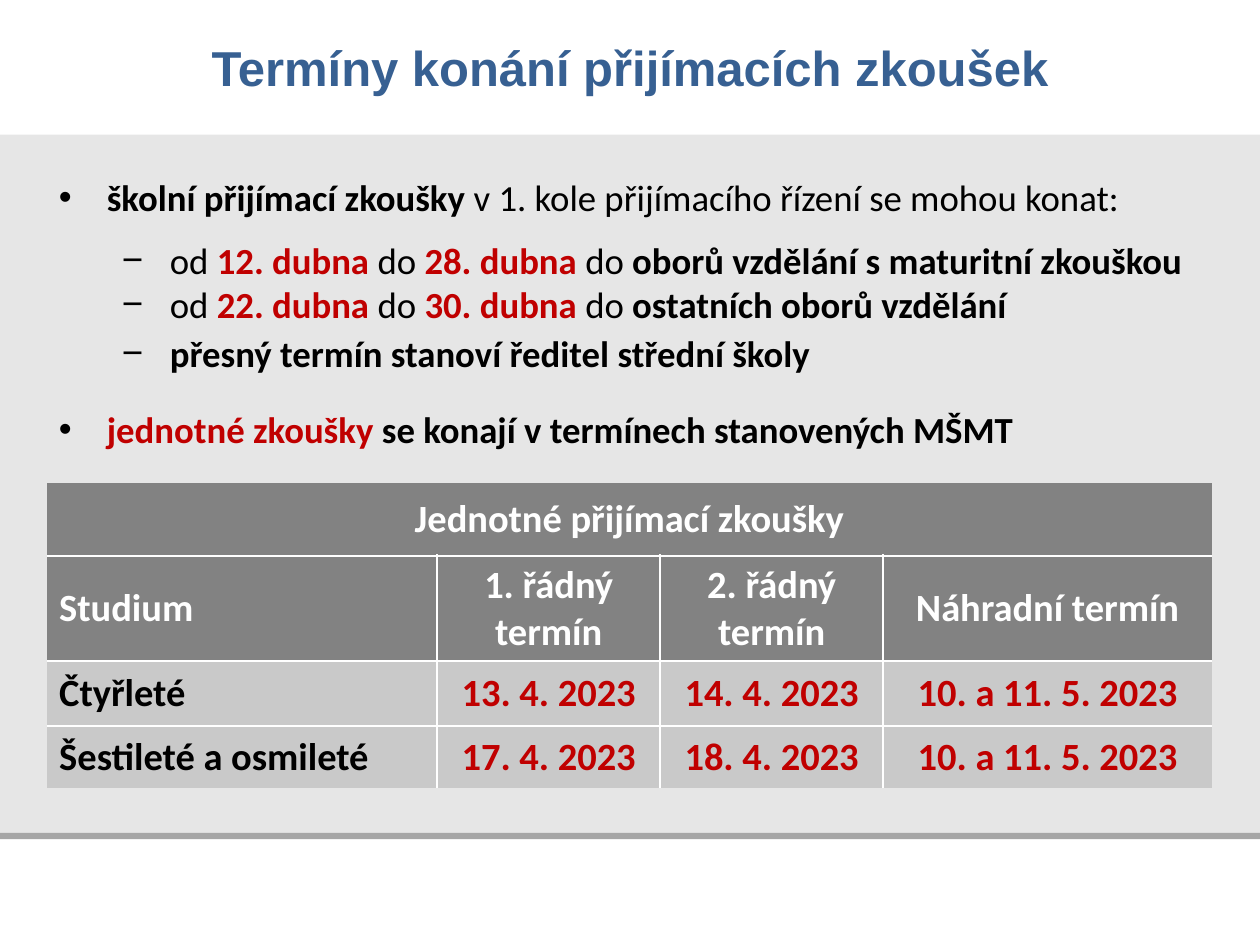
from lxml import etree
from pptx import Presentation
from pptx import util as u
from pptx.dml.color import RGBColor
from pptx.enum import shapes, text
from pptx.oxml.ns import qn

BACKGROUND = RGBColor(0xE6, 0xE6, 0xE6)
WHITE = RGBColor(0xFF, 0xFF, 0xFF)
BLACK = RGBColor(0, 0, 0)
RULE = RGBColor(0xA6, 0xA6, 0xA6)
BLUE = RGBColor(0x37, 0x60, 0x92)
RED = RGBColor(0xC0, 0, 0)
HEADER_GREY = RGBColor(0x82, 0x82, 0x82)
BODY_GREY = RGBColor(0xC9, 0xC9, 0xC9)

WIDTH, HEIGHT = 10, 7.5
MARGIN = 0.37
BLEED = 0.12
BORDER = 1.47
INDENT = 0.38

TITLE = "Termíny konání přijímacích zkoušek"
BANDS = [(6.66, 0.87, WHITE), (6.61, 0.05, RULE), (0, 1.07, WHITE)]

PLAIN = (BLACK, False)
STRONG = (BLACK, True)
ALERT = (RED, True)
BULLETS = [
    (0, 0, [("školní přijímací zkoušky ", STRONG),
            ("v 1. kole přijímacího řízení se mohou konat:", PLAIN)]),
    (1, 10.5, [("od ", PLAIN), ("12. dubna ", ALERT), ("do ", PLAIN),
               ("28. dubna ", ALERT), ("do", PLAIN),
               (" oborů vzdělání s maturitní zkouškou", STRONG)]),
    (1, 0, [("od ", PLAIN), ("22. dubna ", ALERT), ("do ", PLAIN),
            ("30. dubna ", ALERT), ("do", PLAIN),
            (" ostatních oborů vzdělání", STRONG)]),
    (1, 3, [("přesný termín stanoví ředitel střední školy", STRONG)]),
    (0, 18, [("jednotné zkoušky ", ALERT),
             ("se konají v termínech stanovených MŠMT", STRONG)]),
]
LEVELS = [("•", INDENT), ("−", 0.88)]

COLUMNS = [3.1, 1.77, 1.77, 2.61]
ROWS = [0.58, 0.83, 0.52, 0.49]
HEADER_ROWS = 2
EXAMS = [
    ["Jednotné přijímací zkoušky", "", "", ""],
    ["Studium", "1. řádný termín", "2. řádný termín", "Náhradní termín"],
    ["Čtyřleté", "13. 4. 2023", "14. 4. 2023", "10. a 11. 5. 2023"],
    ["Šestileté a osmileté", "17. 4. 2023", "18. 4. 2023", "10. a 11. 5. 2023"],
]


def set_format(target, values):
    for name, value in values.items():
        setattr(target, name, value)


def add_run(paragraph, words, color, bold, size, name="Calibri"):
    run = paragraph.add_run()
    run.text = words
    set_format(run.font, {"size": u.Pt(size), "bold": bold, "name": name})
    run.font.color.rgb = color


def add_text_frame(slide, left, top, width, height, **values):
    box = slide.shapes.add_textbox(*map(u.Inches, (left, top, width, height)))
    set_format(box.text_frame, {"word_wrap": True, **values})
    return box.text_frame


def add_band(slide, top, height, color):
    band = slide.shapes.add_shape(
        shapes.MSO_SHAPE.RECTANGLE,
        *map(u.Inches, (-BLEED, top, WIDTH + 2 * BLEED, height)))
    band.shadow.inherit = False
    band.fill.solid()
    band.fill.fore_color.rgb = color
    band.line.fill.background()


def add_bullet(paragraph, level):
    mark, left = LEVELS[level]
    properties = paragraph._p.get_or_add_pPr()
    properties.set("marL", str(u.Inches(left)))
    properties.set("indent", str(-u.Inches(INDENT)))
    color = etree.SubElement(properties, qn("a:buClr"))
    etree.SubElement(color, qn("a:srgbClr"), val=str(BLACK))
    etree.SubElement(properties, qn("a:buFont"), typeface="Arial")
    etree.SubElement(properties, qn("a:buChar"), char=mark)


def add_bullets(slide):
    frame = add_text_frame(slide, MARGIN, 1.34, WIDTH - 2 * MARGIN, 2.62)
    for index, (level, before, runs) in enumerate(BULLETS):
        paragraph = frame.add_paragraph() if index else frame.paragraphs[0]
        add_bullet(paragraph, level)
        set_format(paragraph, {"level": level, "space_before": u.Pt(before),
                               "alignment": text.PP_ALIGN.JUSTIFY})
        for words, (color, bold) in runs:
            add_run(paragraph, words, color, bold, 21)


def set_borders(cell, row, column):
    inner = {"a:lnL": column > 0, "a:lnR": column < len(COLUMNS) - 1,
             "a:lnT": row > 0, "a:lnB": row < len(ROWS) - 1}
    if row == 0:
        inner["a:lnL"] = inner["a:lnR"] = False
    properties = cell._tc.get_or_add_tcPr()
    for position, (side, visible) in enumerate(inner.items()):
        line = etree.Element(qn(side), w=str(u.Pt(BORDER)))
        if visible:
            fill = etree.SubElement(line, qn("a:solidFill"))
            etree.SubElement(fill, qn("a:srgbClr"), val=str(WHITE))
        else:
            etree.SubElement(line, qn("a:noFill"))
        properties.insert(position, line)


def add_exam_table(slide):
    frame = slide.shapes.add_table(
        len(ROWS), len(COLUMNS),
        *map(u.Inches, (MARGIN, 3.83, sum(COLUMNS), sum(ROWS))))
    table = frame.table
    for column, width in zip(table.columns, COLUMNS):
        column.width = u.Inches(width)
    for row, height in zip(table.rows, ROWS):
        row.height = u.Inches(height)
    table.cell(0, 0).merge(table.cell(0, len(COLUMNS) - 1))
    for row, values in enumerate(EXAMS):
        header = row < HEADER_ROWS
        for column, words in enumerate(values):
            cell = table.cell(row, column)
            cell.vertical_anchor = text.MSO_ANCHOR.MIDDLE
            cell.fill.solid()
            cell.fill.fore_color.rgb = HEADER_GREY if header else BODY_GREY
            set_borders(cell, row, column)
            if not words:
                continue
            paragraph = cell.text_frame.paragraphs[0]
            centered = row == 0 or column > 0
            paragraph.alignment = text.PP_ALIGN.CENTER if centered else text.PP_ALIGN.LEFT
            color = WHITE if header else RED if column else BLACK
            add_run(paragraph, words, color, True, 22)


def main():
    presentation = Presentation()
    set_format(presentation, {"slide_width": u.Inches(WIDTH),
                              "slide_height": u.Inches(HEIGHT)})
    slide = presentation.slides.add_slide(presentation.slide_layouts[6])
    slide.background.fill.solid()
    slide.background.fill.fore_color.rgb = BACKGROUND
    for band in BANDS:
        add_band(slide, *band)
    title = add_text_frame(slide, 0.75, 0, 8.5, 1.07, margin_left=0, margin_right=0,
                           margin_top=0, margin_bottom=0,
                           vertical_anchor=text.MSO_ANCHOR.MIDDLE).paragraphs[0]
    title.alignment = text.PP_ALIGN.CENTER
    add_run(title, TITLE, BLUE, True, 28, "Arial")
    add_bullets(slide)
    add_exam_table(slide)
    presentation.save("out.pptx")


if __name__ == "__main__":
    main()
